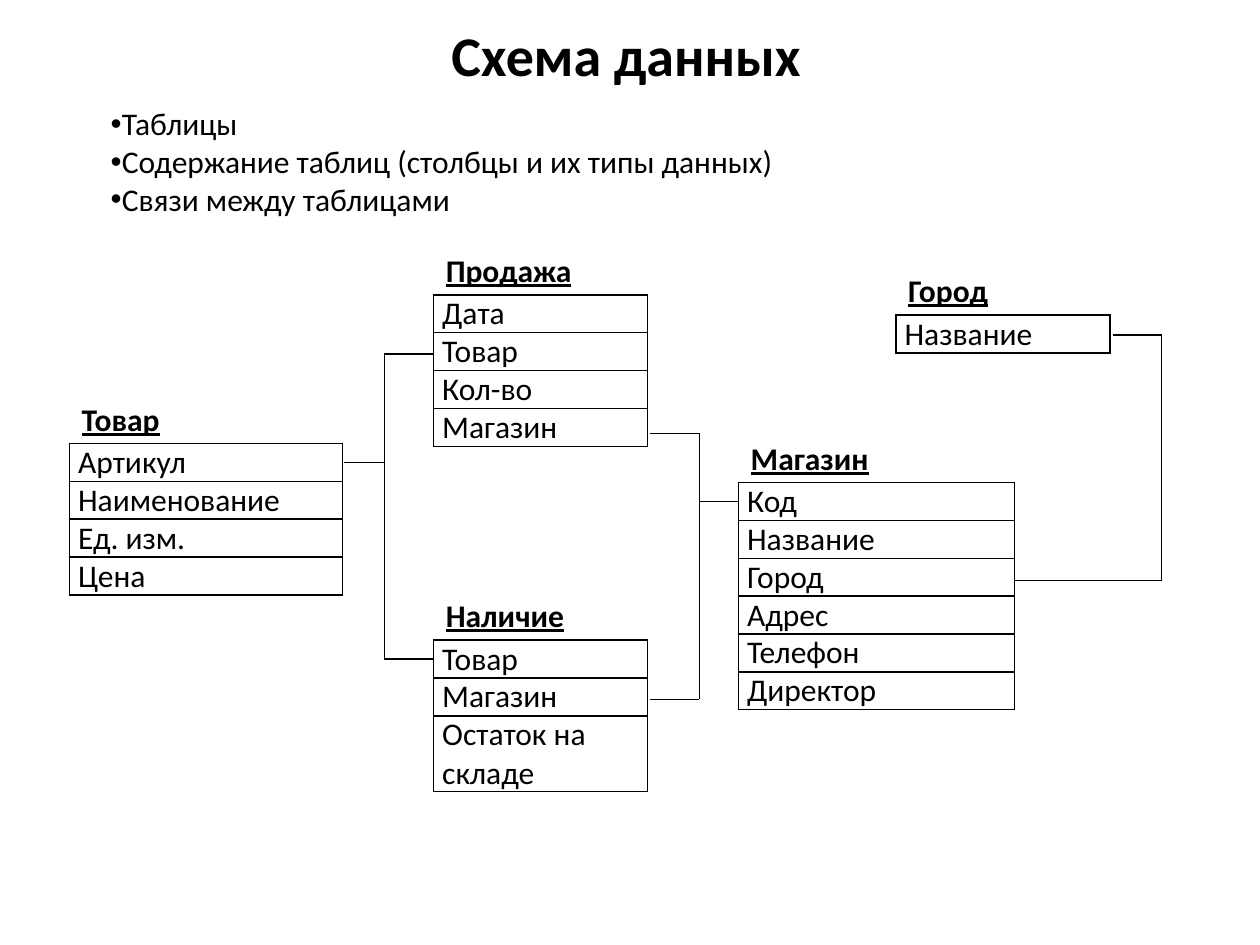
import itertools

import pptx
import pptx.dml.color
import pptx.enum.shapes
import pptx.enum.text
import pptx.oxml
import pptx.oxml.ns
import pptx.util

ALIGN = pptx.enum.text.PP_ALIGN
COLORS = {"ink": "000000", "paper": "FFFFFF"}


class Diagram:
    font = "Calibri"
    size = 18
    row = 3
    heading_rise = 3.98

    def __init__(self, prs, columns=100, rows=75):
        self.s = prs.slides.add_slide(prs.slide_layouts[6])
        self.dx = prs.slide_width / columns
        self.dy = prs.slide_height / rows
        fill = self.s.background.fill
        fill.solid()
        fill.fore_color.rgb = self.color("paper")

    def color(self, name):
        return pptx.dml.color.RGBColor.from_string(COLORS[name])

    def x(self, columns):
        return round(columns * self.dx)

    def y(self, rows):
        return round(rows * self.dy)

    def style(self, tf, size=None, **font):
        for p in tf.paragraphs:
            for r in p.runs:
                r.font.name = self.font
                r.font.size = pptx.util.Pt(size or self.size)
                r.font.color.rgb = self.color("ink")
                for key, value in font.items():
                    setattr(r.font, key, value)

    def text(self, x, y, w, h, text, align=ALIGN.LEFT, wrap=True, **font):
        sp = self.s.shapes.add_textbox(self.x(x), self.y(y), self.x(w), self.y(h))
        tf = sp.text_frame
        tf.text = text
        tf.word_wrap = wrap
        if not wrap:
            tf.auto_size = pptx.enum.text.MSO_AUTO_SIZE.SHAPE_TO_FIT_TEXT
        for p in tf.paragraphs:
            p.alignment = align
        self.style(tf, **font)
        return tf

    def title(self, x, y, w, h, text):
        tf = self.text(x, y, w, h, text, ALIGN.CENTER, size=32, bold=True)
        tf.vertical_anchor = pptx.enum.text.MSO_ANCHOR.MIDDLE

    def bullets(self, x, y, w, h, items):
        tf = self.text(x, y, w, h, "\n".join(items))
        indent = pptx.util.Inches(0.09)
        for p in tf.paragraphs:
            pPr = p._p.get_or_add_pPr()
            pPr.set("marL", str(indent))
            pPr.set("indent", str(-indent))
            pPr.append(pptx.oxml.parse_xml(
                f'<a:buFont {pptx.oxml.ns.nsdecls("a")} typeface="Arial"/>'))
            pPr.append(pptx.oxml.parse_xml(
                f'<a:buChar {pptx.oxml.ns.nsdecls("a")} char="•"/>'))

    def border(self, cell):
        tcPr = cell._tc.get_or_add_tcPr()
        for side in "LRTB":
            tcPr.append(pptx.oxml.parse_xml(
                f'<a:ln{side} {pptx.oxml.ns.nsdecls("a")} w="{pptx.util.Pt(1)}">'
                f'<a:solidFill><a:srgbClr val="{COLORS["ink"]}"/></a:solidFill>'
                f'</a:ln{side}>'))

    def entity(self, x, y, w, name, name_width, fields, align=ALIGN.LEFT):
        self.text(x, y - self.heading_rise, name_width, 4, name, align,
                  wrap=False, bold=True, underline=True)
        heights = [self.row * (2 if " на " in field else 1) for field in fields]
        table = self.s.shapes.add_table(
            len(fields), 1, self.x(x), self.y(y), self.x(w), self.y(sum(heights))).table
        table.first_row = table.horz_banding = False
        for i, (field, height) in enumerate(zip(fields, heights)):
            table.rows[i].height = self.y(height)
            cell = table.cell(i, 0)
            cell.text_frame.text = field
            cell.margin_left = cell.margin_right = pptx.util.Inches(0.07)
            cell.margin_top = cell.margin_bottom = 0
            self.style(cell.text_frame)
            self.border(cell)
            cell.fill.background()

    def route(self, *points):
        for (x1, y1), (x2, y2) in itertools.pairwise(points):
            line = self.s.shapes.add_connector(
                pptx.enum.shapes.MSO_CONNECTOR.STRAIGHT,
                self.x(x1), self.y(y1), self.x(x2), self.y(y2))
            line.line.color.rgb = self.color("ink")
            line.line.width = pptx.util.Pt(0.75)
            line._element.spPr.append(pptx.oxml.parse_xml(
                f'<a:effectLst {pptx.oxml.ns.nsdecls("a")}/>'))


def main():
    prs = pptx.Presentation()
    prs.slide_width = pptx.util.Inches(10)
    prs.slide_height = pptx.util.Inches(7.5)
    d = Diagram(prs)

    d.title(4.7, 0, 90, 8.6, "Схема данных")
    d.bullets(7.8, 7.8, 81.3, 10.1, [
        "Таблицы",
        "Содержание таблиц (столбцы и их типы данных)",
        "Связи между таблицами",
    ])

    d.entity(5.5, 35.2, 21.7, "Товар", 8.2,
             ["Артикул", "Наименование", "Ед. изм.", "Цена"])
    d.entity(34.4, 23.4, 17, "Продажа", 12,
             ["Дата", "Товар", "Кол-во", "Магазин"])
    d.entity(58.6, 38.3, 21.9, "Магазин", 11.5,
             ["Код", "Название", "Город", "Адрес", "Телефон", "Директор"], ALIGN.JUSTIFY)
    d.entity(71.1, 25, 17, "Город", 8.5, ["Название"])
    d.entity(34.4, 50.8, 17, "Наличие", 11.5,
             ["Товар", "Магазин", "Остаток на складе"], ALIGN.JUSTIFY)

    d.route((27.3, 36.7), (30.5, 36.7))
    d.route((34.4, 28.1), (30.5, 28.1), (30.5, 52.3), (34.4, 52.3))
    d.route((51.6, 34.4), (55.5, 34.4), (55.5, 55.5), (51.6, 55.5))
    d.route((55.5, 39.8), (58.6, 39.8))
    d.route((88.3, 26.6), (92.2, 26.6), (92.2, 46.1), (80.5, 46.1))

    prs.save("out.pptx")


if __name__ == "__main__":
    main()
